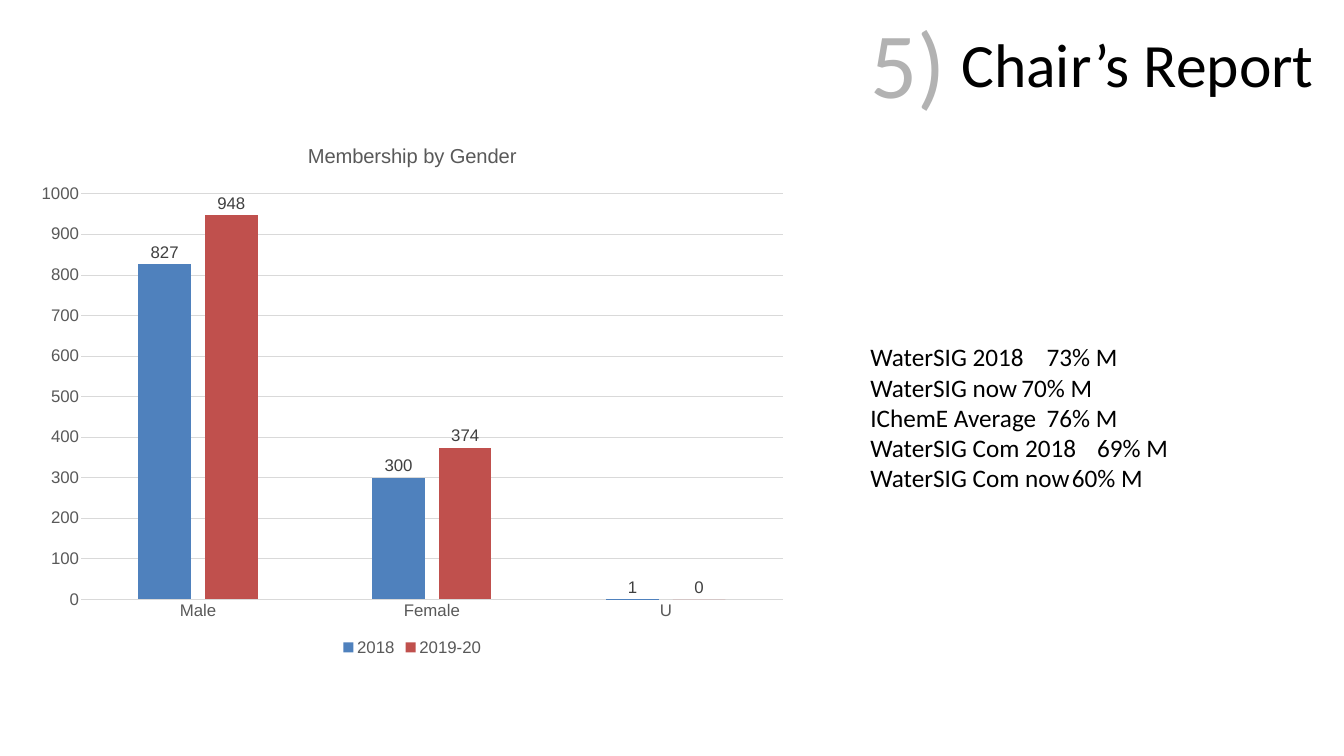
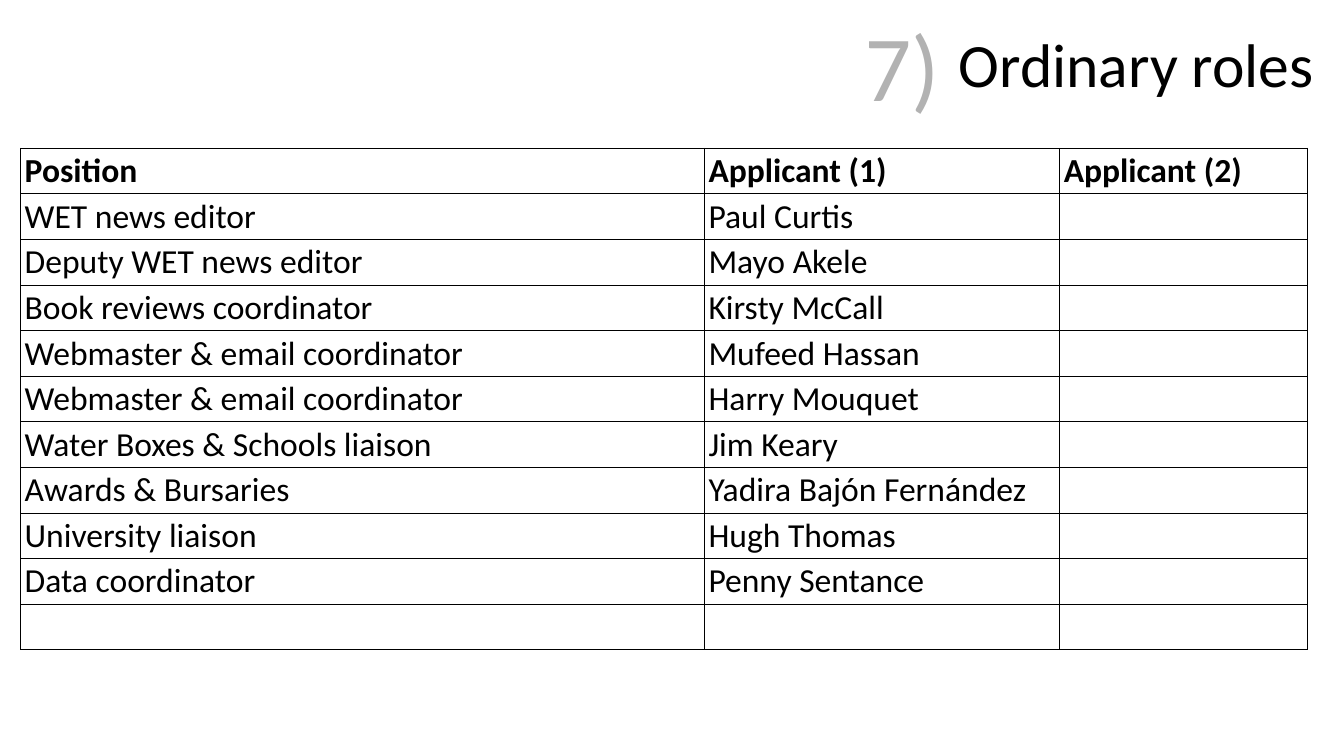
"""Build the report and roles slides of a committee meeting deck."""
from dataclasses import dataclass
from typing import Any, Sequence

from lxml.etree import SubElement as Sub
from pptx import Presentation
from pptx.chart.data import CategoryChartData as ChartData
from pptx.dml.color import RGBColor as Rgb
from pptx.enum.chart import XL_CHART_TYPE as Kind
from pptx.enum.chart import XL_LABEL_POSITION as Label
from pptx.enum.chart import XL_LEGEND_POSITION as Legend
from pptx.enum.chart import XL_TICK_MARK as Tick
from pptx.enum.text import MSO_ANCHOR as Anchor
from pptx.enum.text import MSO_AUTO_SIZE as Fit
from pptx.enum.text import PP_ALIGN as Align
from pptx.oxml import parse_xml
from pptx.oxml.ns import nsdecls, qn
from pptx.util import Inches, Pt


@dataclass(frozen=True)
class Theme:
    """Hold the colours, fonts and type sizes of the deck."""
    ink: str = "000000"
    grey: str = "595959"
    label: str = "404040"
    rule: str = "D9D9D9"
    face: str = "Calibri"
    plot: str = "Arial"
    title: float = 88
    mark: float = 133
    cell: float = 48
    body: float = 36
    head: float = 28.8
    small: float = 24
    fade: int = 30


@dataclass(frozen=True)
class Box:
    """Hold a place on the slide in inches."""
    left: float
    top: float
    width: float
    height: float

    def spot(self) -> list[int]:
        """Give the place as lengths."""
        return [Inches(n) for n in (self.left, self.top, self.width, self.height)]


@dataclass(frozen=True)
class Series:
    """Hold one set of chart columns."""
    name: str
    color: str
    values: tuple[int, ...]


THEME = Theme()
TITLE = Box(8.17, 0, 18, 2.5)
CHART = Box(0.52, 2.5, 15.32, 10.6)
SHARES = Box(17.17, 6.68, 8.12, 3.23)
GRID = Box(0.41, 2.94, 25.53, 9.95)
WIDTHS = (13.57, 7.05, 4.91)
TAB = 5
GENDERS = ("Male", "Female", "U")
YEARS = (
    Series("2018", "4F81BD", (827, 300, 1)),
    Series("2019-20", "C0504D", (948, 374, 0)),
)
RATES = (
    ("WaterSIG 2018", "73% M"),
    ("WaterSIG now", "70% M"),
    ("IChemE Average", "76% M"),
    ("WaterSIG Com 2018", "69% M"),
    ("WaterSIG Com now", "60% M"),
)
ROLES = (
    ("Position", "Applicant (1)", "Applicant (2)"),
    ("WET news editor", "Paul Curtis", ""),
    ("Deputy WET news editor", "Mayo Akele", ""),
    ("Book reviews coordinator", "Kirsty McCall", ""),
    ("Webmaster & email coordinator", "Mufeed Hassan", ""),
    ("Webmaster & email coordinator", "Harry Mouquet", ""),
    ("Water Boxes & Schools liaison", "Jim Keary", ""),
    ("Awards & Bursaries", "Yadira Bajón Fernández", ""),
    ("University liaison", "Hugh Thomas", ""),
    ("Data coordinator", "Penny Sentance", ""),
    ("", "", ""),
)


def style(font: Any, size: float, color: str, face: str, bold: bool = False) -> None:
    """Format a font."""
    font.size, font.name, font.bold = Pt(size), face, bold
    font.color.rgb = Rgb.from_string(color)


def write(frame: Any, text: str, *, size: float, color: str = THEME.ink,
          face: str = THEME.face, bold: bool = False, align: Any = Align.LEFT) -> None:
    """Write lines of text with one format."""
    for i, line in enumerate(text.split("\n")):
        para = frame.add_paragraph() if i else frame.paragraphs[0]
        para.alignment, para.space_before = align, Pt(0)
        run = para.add_run()
        run.text = line
        style(run.font, size, color, face, bold)


def place(shape: Any, box: Box, anchor: Any = Anchor.TOP, wrap: bool = True,
          fit: Any = Fit.NONE) -> Any:
    """Put a text shape in its box and return its text frame."""
    shape.left, shape.top, shape.width, shape.height = box.spot()
    frame = shape.text_frame
    frame.margin_left = frame.margin_right = Inches(0.1)
    frame.margin_top = frame.margin_bottom = Inches(0.1)
    frame.vertical_anchor, frame.word_wrap, frame.auto_size = anchor, wrap, fit
    return frame


def head(slide: Any, mark: str, text: str, left: float, top: float) -> None:
    """Draw the slide title and its faded item number."""
    frame = place(slide.shapes.title, TITLE, Anchor.MIDDLE)
    write(frame, text, size=THEME.title, align=Align.RIGHT)
    box = Box(left, top, 1.71, 2.44)
    shape = slide.shapes.add_textbox(*box.spot())
    write(place(shape, box, wrap=False, fit=Fit.SHAPE_TO_FIT_TEXT), mark, size=THEME.mark)
    for tint in shape.element.iter(qn("a:srgbClr")):
        Sub(tint, qn("a:alpha"), val=str(THEME.fade * 1000))


def rates(shape: Any, rows: Sequence[tuple[str, str]]) -> None:
    """Fill the body with names and shares set on one tab stop."""
    frame = place(shape, SHARES)
    write(frame, "\n".join("\t".join(row) for row in rows), size=THEME.body)
    for para in shape.element.iter(qn("a:p")):
        props = para.get_or_add_pPr()
        props.set("marL", "0")
        props.set("indent", "0")
        Sub(props, qn("a:buNone"))
        tabs = Sub(props, qn("a:tabLst"))
        Sub(tabs, qn("a:tab"), pos=str(Inches(TAB)), algn="l")


def columns(slide: Any, title: str, names: Sequence[str], sets: Sequence[Series]) -> None:
    """Draw the clustered column chart."""
    data = ChartData()
    data.categories = names
    for item in sets:
        data.add_series(item.name, item.values)
    chart = slide.shapes.add_chart(Kind.COLUMN_CLUSTERED, *CHART.spot(), data).chart
    style(chart.font, THEME.small, THEME.grey, THEME.plot)
    write(chart.chart_title.text_frame, title, size=THEME.head, color=THEME.grey,
          face=THEME.plot, align=Align.CENTER)
    chart.chart_title.include_in_layout = False

    plot = chart.plots[0]
    plot.gap_width, plot.overlap, plot.vary_by_categories = 219, -27, False
    for item, bars in zip(sets, plot.series):
        bars.format.fill.solid()
        bars.format.fill.fore_color.rgb = Rgb.from_string(item.color)
        tags = bars.data_labels
        tags.show_value, tags.position = True, Label.OUTSIDE_END
        style(tags.font, THEME.small, THEME.label, THEME.plot)

    base, scale = chart.category_axis, chart.value_axis
    for axis in (base, scale):
        axis.major_tick_mark = axis.minor_tick_mark = Tick.NONE
        style(axis.tick_labels.font, THEME.small, THEME.grey, THEME.plot)
    scale.minimum_scale, scale.maximum_scale, scale.major_unit = 0, 1000, 100
    scale.format.line.fill.background()
    for line in (base.format.line, scale.major_gridlines.format.line):
        line.color.rgb = Rgb.from_string(THEME.rule)
        line.width = Pt(0.75)

    chart.has_legend = True
    chart.legend.position, chart.legend.include_in_layout = Legend.BOTTOM, False
    style(chart.legend.font, THEME.small, THEME.grey, THEME.plot)


def edge(side: str) -> Any:
    """Make one cell border."""
    return parse_xml(
        f'<a:{side} {nsdecls("a")} w="{Pt(1)}"><a:solidFill>'
        f'<a:srgbClr val="{THEME.ink}"/></a:solidFill></a:{side}>')


def roster(slide: Any, rows: Sequence[Sequence[str]]) -> None:
    """Draw the ruled table of roles."""
    shape = slide.shapes.add_table(len(rows), len(WIDTHS), *GRID.spot())
    table = shape.table
    table.first_row = table.horz_banding = False
    for col, width in zip(table.columns, WIDTHS):
        col.width = Inches(width)
    for r, row in enumerate(rows):
        table.rows[r].height = Inches(GRID.height / len(rows))
        for c, text in enumerate(row):
            cell = table.cell(r, c)
            cell.fill.background()
            cell.vertical_anchor = Anchor.MIDDLE
            cell.margin_left = cell.margin_right = Inches(0.08)
            cell.margin_top = cell.margin_bottom = Inches(0.05)
            if text:
                write(cell.text_frame, text, size=THEME.cell, bold=r == 0)
    for props in shape.element.iter(qn("a:tcPr")):
        for i, side in enumerate(("lnL", "lnR", "lnT", "lnB")):
            props.insert(i, edge(side))


def main() -> None:
    """Build and save the deck."""
    deck = Presentation()
    deck.slide_width, deck.slide_height = Inches(26.67), Inches(15)

    report = deck.slides.add_slide(deck.slide_layouts[1])
    head(report, "5)", "Chair’s Report", 17.17, 0)
    rates(report.placeholders[1], RATES)
    columns(report, "Membership by Gender", GENDERS, YEARS)

    roles = deck.slides.add_slide(deck.slide_layouts[5])
    head(roles, "7)", "Ordinary roles", 17.06, 0.06)
    roster(roles, ROLES)

    deck.save("out.pptx")


if __name__ == "__main__":
    main()
